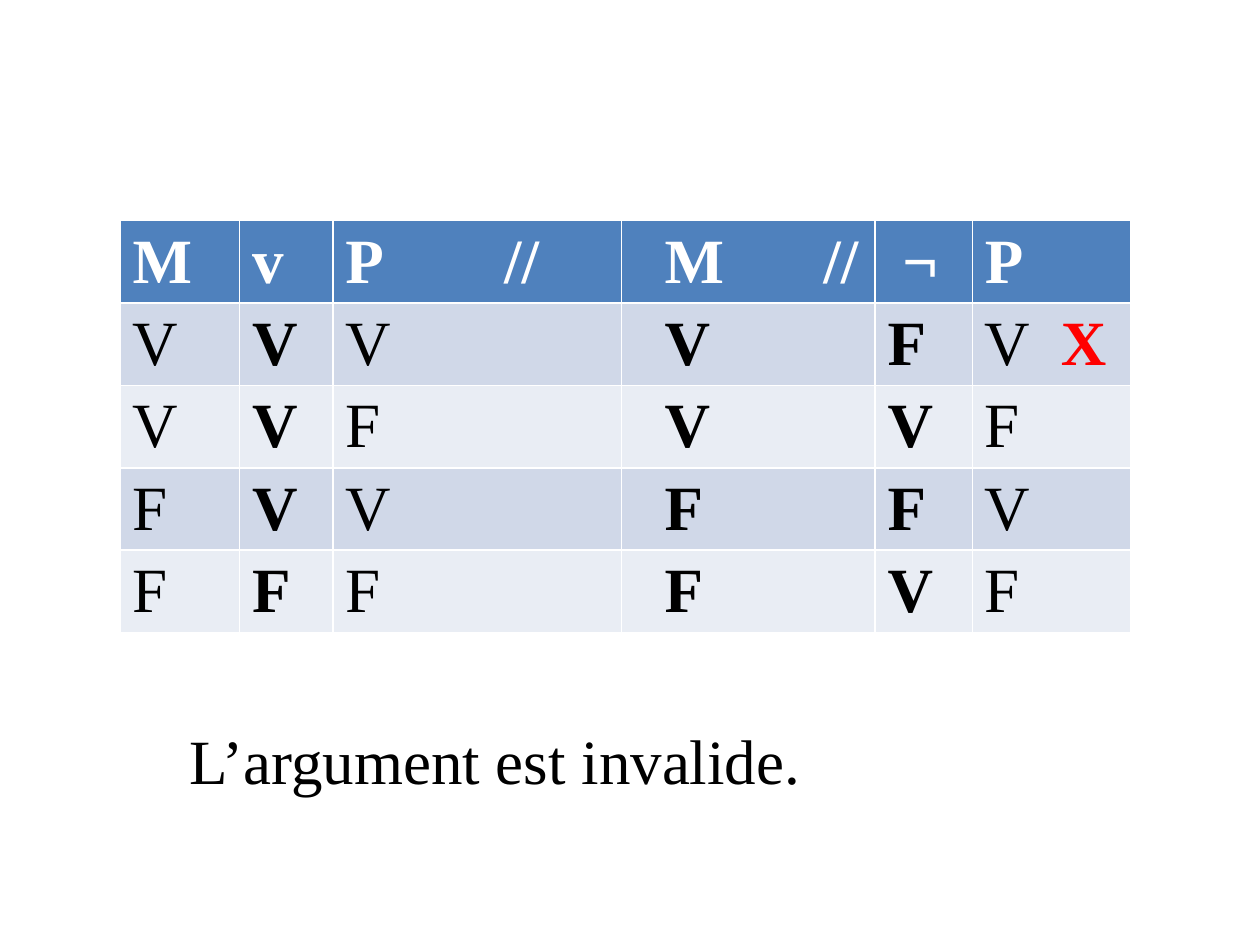
from lxml.etree import SubElement
from pptx import Presentation
from pptx.dml.color import RGBColor
from pptx.oxml.ns import qn
from pptx.util import Cm, Pt

WHITE = RGBColor(0xFF, 0xFF, 0xFF)
BLACK = RGBColor(0x00, 0x00, 0x00)
RED = RGBColor(0xFF, 0x00, 0x00)
HEADER_BLUE = RGBColor(0x4F, 0x81, 0xBD)
BANDS = (RGBColor(0xD0, 0xD8, 0xE8), RGBColor(0xE9, 0xED, 0xF4))

HEADERS = ["M", "v", "P\t//", "M\t//", "¬", "P"]
TRUTH_ROWS = ["VVVVFV", "VVFVVF", "FVVFFV", "FFFFVF"]
COLUMN_WIDTHS = [2.41, 1.88, 5.82, 5.11, 1.96, 3.2]
RESULT_COLUMNS = {1, 3, 4}
CONCLUSION_COLUMN = 3
NEGATION_COLUMN = 4


class SlideBuilder:
    def __init__(self, slide):
        self.slide = slide
        self.font_name = "Times New Roman"
        self.font_size = Pt(36)

    def format_run(self, run, color=BLACK, bold=False):
        run.font.name = self.font_name
        run.font.size = self.font_size
        run.font.bold = bold
        run.font.color.rgb = color

    def add_tab_stop(self, paragraph, position):
        properties = paragraph._p.get_or_add_pPr()
        tab_list = SubElement(properties, qn("a:tabLst"))
        SubElement(tab_list, qn("a:tab"), pos=str(int(position)), algn="l")

    def fill_cell(self, cell, text, fill, color=BLACK, bold=False):
        cell.fill.solid()
        cell.fill.fore_color.rgb = fill
        paragraph = cell.text_frame.paragraphs[0]
        paragraph.text = text
        self.format_run(paragraph.runs[0], color, bold)
        return paragraph

    def add_truth_table(self, left, top, row_height):
        row_count = len(TRUTH_ROWS) + 1
        table = self.slide.shapes.add_table(
            row_count, len(HEADERS), left, top,
            Cm(sum(COLUMN_WIDTHS)), row_height * row_count).table
        for column, width in zip(table.columns, COLUMN_WIDTHS):
            column.width = Cm(width)

        for index, header in enumerate(HEADERS):
            paragraph = self.fill_cell(
                table.cell(0, index), header, HEADER_BLUE, WHITE, bold=True)
            if "\t" in header:
                self.add_tab_stop(paragraph, Cm(3.2))
        table.cell(0, NEGATION_COLUMN).margin_left = Cm(0.55)

        for row, values in enumerate(TRUTH_ROWS, start=1):
            for index, value in enumerate(values):
                self.fill_cell(table.cell(row, index), value,
                               BANDS[(row - 1) % 2],
                               bold=index in RESULT_COLUMNS)
        for row in range(row_count):
            table.cell(row, CONCLUSION_COLUMN).margin_left = Cm(0.87)
        return table

    def mark_counterexample(self, cell):
        paragraph = cell.text_frame.paragraphs[0]
        paragraph.runs[0].text += "\t"
        self.add_tab_stop(paragraph, Cm(1.53))
        mark = paragraph.add_run()
        mark.text = "X"
        self.format_run(mark, RED, bold=True)

    def add_text(self, text, left, top, width, height):
        text_frame = self.slide.shapes.add_textbox(
            left, top, width, height).text_frame
        text_frame.word_wrap = True
        text_frame.text = text
        self.format_run(text_frame.paragraphs[0].runs[0])


def main():
    presentation = Presentation()
    presentation.slide_width = Cm(25.4)
    presentation.slide_height = Cm(19.05)
    blank_layout = presentation.slide_layouts[6]
    builder = SlideBuilder(presentation.slides.add_slide(blank_layout))

    table = builder.add_truth_table(Cm(2.42), Cm(4.45), Cm(1.65))
    builder.mark_counterexample(table.cell(1, len(HEADERS) - 1))
    builder.add_text("L’argument est invalide.",
                     Cm(3.58), Cm(14.43), Cm(14.22), Cm(1.8))

    presentation.save("out.pptx")


if __name__ == "__main__":
    main()
